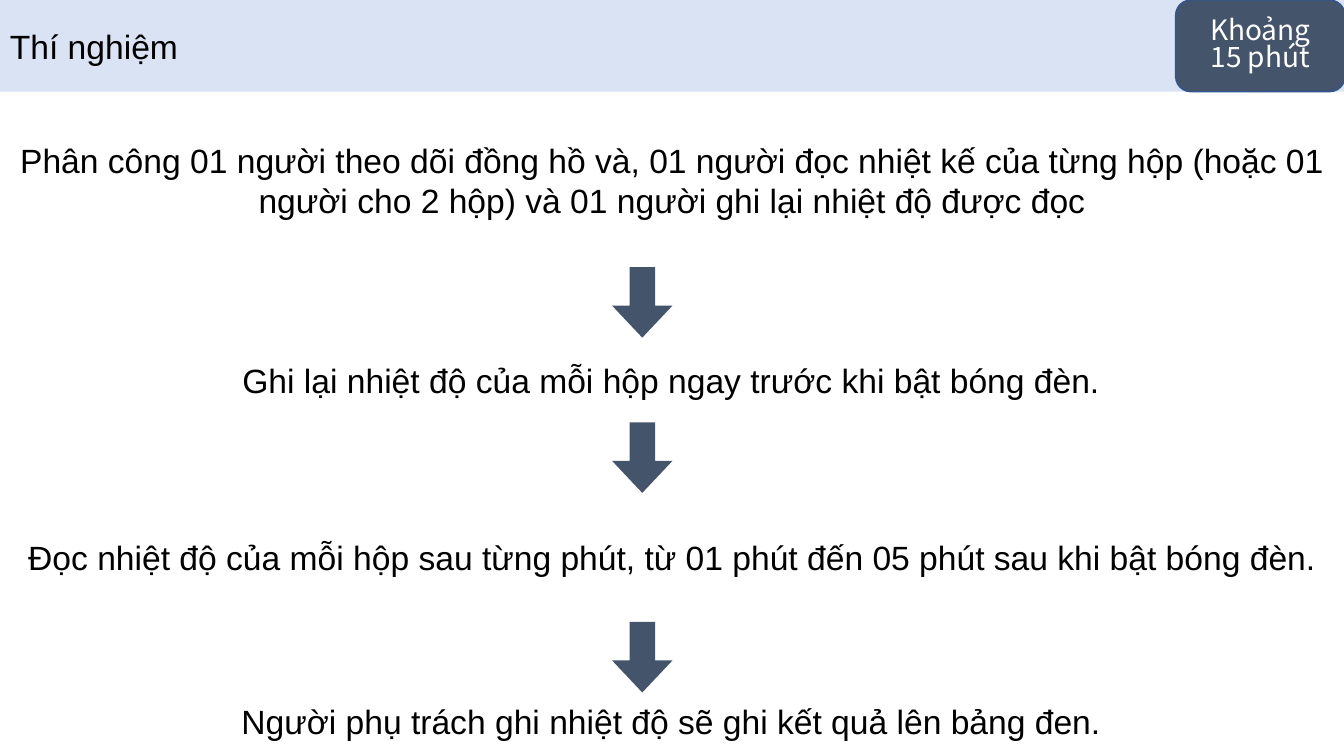
"""Build a slide that shows the steps of an experiment from top to bottom."""
from pptx import Presentation
from pptx.dml.color import RGBColor
from pptx.enum import shapes, text
from pptx.util import Inches, Pt

BLACK = RGBColor(0x00, 0x00, 0x00)
WHITE = RGBColor(0xFF, 0xFF, 0xFF)
SLATE = RGBColor(0x44, 0x54, 0x6A)
PALE = RGBColor(0xDA, 0xE3, 0xF3)
EDGE = RGBColor(0x32, 0x54, 0x91)

WIDE, HIGH, BAR = 13.33, 7.5, 0.91
TITLE = "Thí nghiệm"
BADGE = ["Khoảng", "15 phút"]
STEPS = [
    (0, 1, 1.57, "Phân công 01 người theo dõi đồng hồ và, 01 người đọc nhiệt kế của từng hộp "
                 "(hoặc 01 người cho 2 hộp) và 01 người ghi lại nhiệt độ được đọc"),
    (-0.01, 3.44, 0.66, "Ghi lại nhiệt độ của mỗi hộp ngay trước khi bật bóng đèn."),
    (0, 4.98, 1.1, "Đọc nhiệt độ của mỗi hộp sau từng phút, từ 01 phút đến 05 phút "
                   "sau khi bật bóng đèn."),
    (-0.01, 6.8, 0.7, "Người phụ trách ghi nhiệt độ sẽ ghi kết quả lên bảng đen."),
]
ARROWS = [2.7, 4.24, 6.22]

deck = Presentation()
deck.slide_width, deck.slide_height = Inches(WIDE), Inches(HIGH)
slide = deck.slides.add_slide(deck.slide_layouts[6])


def write(shape, *lines, size=24, font="Arial", color=BLACK,
          align=text.PP_ALIGN.CENTER, space=None):
    frame = shape.text_frame
    frame.word_wrap = True
    frame.vertical_anchor = text.MSO_ANCHOR.MIDDLE
    for i, line in enumerate(lines):
        para = frame.add_paragraph() if i else frame.paragraphs[0]
        para.alignment = align
        para.line_spacing = space
        run = para.add_run()
        run.text = line
        run.font.size, run.font.name = Pt(size), font
        run.font.color.rgb = color


def draw(kind, left, top, width, height, fill, line=None):
    shape = slide.shapes.add_shape(kind, *map(Inches, (left, top, width, height)))
    shape.shadow.inherit = False
    shape.fill.solid()
    shape.fill.fore_color.rgb = fill
    if line is None:
        shape.line.fill.background()
    else:
        shape.line.color.rgb = line
        shape.line.width = Pt(1)
    return shape


for left, top, height, words in STEPS:
    box = slide.shapes.add_textbox(*map(Inches, (left, top, WIDE, height)))
    write(box, words)

for top in ARROWS:
    arrow = draw(shapes.MSO_SHAPE.RIGHT_ARROW, 6.02, top, 0.7, 0.6, SLATE)
    arrow.adjustments[0], arrow.adjustments[1] = 0.42, 0.53
    arrow.rotation = 90

bar = draw(shapes.MSO_SHAPE.RECTANGLE, 0, 0, WIDE, BAR, PALE)
write(bar, TITLE, align=text.PP_ALIGN.LEFT)
badge = draw(shapes.MSO_SHAPE.ROUNDED_RECTANGLE, 11.66, 0, 1.68, BAR, SLATE, EDGE)
write(badge, *BADGE, size=20, font="Noto Sans CJK JP", color=WHITE, space=0.8)

deck.save("out.pptx")
